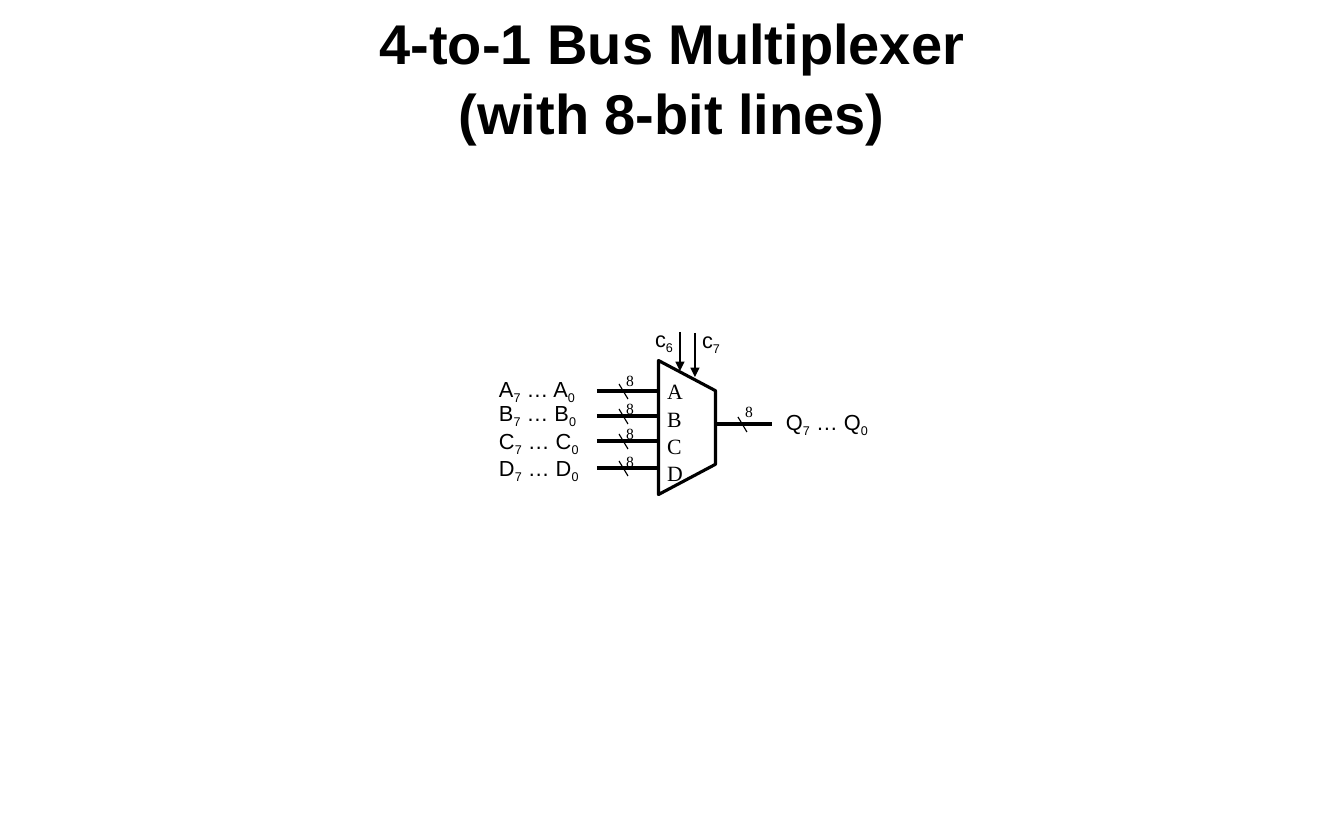
from lxml.etree import SubElement
from pptx import Presentation
from pptx.dml.color import RGBColor
from pptx.enum.shapes import MSO_CONNECTOR as Connector, MSO_SHAPE as Shape
from pptx.enum.text import MSO_ANCHOR as Anchor, PP_ALIGN as Align
from pptx.oxml.ns import qn
from pptx.util import Pt

SCALE = 914400 / 112
BLACK = RGBColor(0, 0, 0)
WHITE = RGBColor(255, 255, 255)
SANS = "Arial"
SERIF = "Times New Roman"

# letter, then offsets of the wire, its label and its bus width
INPUTS = [
    ("A", 71, 50, 45),
    ("B", 96, 74, 73),
    ("C", 121, 102, 98),
    ("D", 148, 129, 126),
]


def px(length):
    """Turn pixels into EMU."""
    return round(length * SCALE)


def style_font(font, name, size, bold=False):
    """Give a font its face, size, weight and black colour."""
    font.name = name
    font.size = Pt(size)
    font.bold = bold
    font.color.rgb = BLACK


def add_line(shapes, start, end, width, arrow=False):
    """Draw a straight black line between two points."""
    line = shapes.add_connector(Connector.STRAIGHT, *map(px, start + end))
    line.line.color.rgb = BLACK
    line.line.width = Pt(width)
    if arrow:
        SubElement(line.line._get_or_add_ln(), qn("a:tailEnd"), type="triangle")
    SubElement(line._element.spPr, qn("a:effectLst"))


def add_text(shapes, left, top, width, height, name, size, lines, spacing=1.0):
    """Place lines of text; every second piece of a line is a subscript."""
    box = shapes.add_textbox(px(left), px(top), px(width), px(height))
    frame = box.text_frame
    frame.word_wrap = True
    for number, pieces in enumerate(lines):
        paragraph = frame.add_paragraph() if number else frame.paragraphs[0]
        paragraph.line_spacing = spacing
        style_font(paragraph.font, name, size)
        for index, piece in enumerate(pieces):
            run = paragraph.add_run()
            run.text = piece
            if index % 2:
                run._r.get_or_add_rPr().set("baseline", "-25000")


def add_bus_label(shapes, left, top, letter):
    """Name the eight lines of a bus."""
    pieces = (letter, "7", f" … {letter}", "0")
    add_text(shapes, left, top, 112, 38, SANS, 14, [pieces])


def add_bus(shapes, left, right, y, slash, digit_top):
    """Draw a bus with its slash and its width of eight."""
    add_line(shapes, (left, y), (right, y), 2)
    add_line(shapes, (slash, y - 7), (slash + 9, y + 8), 0.75)
    add_text(shapes, slash - 4, digit_top, 34, 30, SERIF, 10, [("8",)])


def add_multiplexer(slide, left, top):
    """Draw the multiplexer with its inputs, controls and output."""
    shapes = slide.shapes.add_group_shape().shapes
    body = shapes.add_shape(
        Shape.TRAPEZOID, px(left + 132), px(top + 79), px(134), px(57)
    )
    body.rotation = 90
    body.adjustments[0] = 0.53
    body.shadow.inherit = False
    body.fill.solid()
    body.fill.fore_color.rgb = WHITE
    body.line.color.rgb = BLACK
    body.line.width = Pt(2)

    for letter, wire, label, digit in INPUTS:
        add_bus_label(shapes, left, top + label, letter)
        add_bus(shapes, left + 109, left + 170, top + wire, left + 131, top + digit)
    letters = [(row[0],) for row in INPUTS]
    add_text(shapes, left + 168, top + 51, 54, 123, SERIF, 14, letters, 1.05)

    for number, x, start, end, label in (("6", 192, 12, 51, 156), ("7", 207, 13, 57, 203)):
        add_line(shapes, (left + x, top + start), (left + x, top + end), 1.75, True)
        add_text(shapes, left + label, top + start - 12, 45, 38, SANS, 14, [("c", number)])

    add_bus(shapes, left + 229, left + 284, top + 104, left + 250, top + 76)
    add_bus_label(shapes, left + 287, top + 83, "Q")


def add_title(slide, left, top, width, height):
    """Fill and place the title placeholder."""
    title = slide.shapes.title
    title.left, title.top, title.width, title.height = map(px, (left, top, width, height))
    frame = title.text_frame
    frame.vertical_anchor = Anchor.MIDDLE
    paragraph = frame.paragraphs[0]
    paragraph.text = "4-to-1 Bus Multiplexer\v(with 8-bit lines)"
    paragraph.alignment = Align.CENTER
    paragraph.line_spacing = 1.04
    style_font(paragraph.font, SANS, 36, True)


def main():
    """Build and save the slide."""
    presentation = Presentation()
    presentation.slide_width = px(1344)
    presentation.slide_height = px(840)
    slide = presentation.slides.add_slide(presentation.slide_layouts[5])
    add_title(slide, 112, 1, 1120, 149)
    add_multiplexer(slide, 488, 320)
    presentation.save("out.pptx")


if __name__ == "__main__":
    main()
